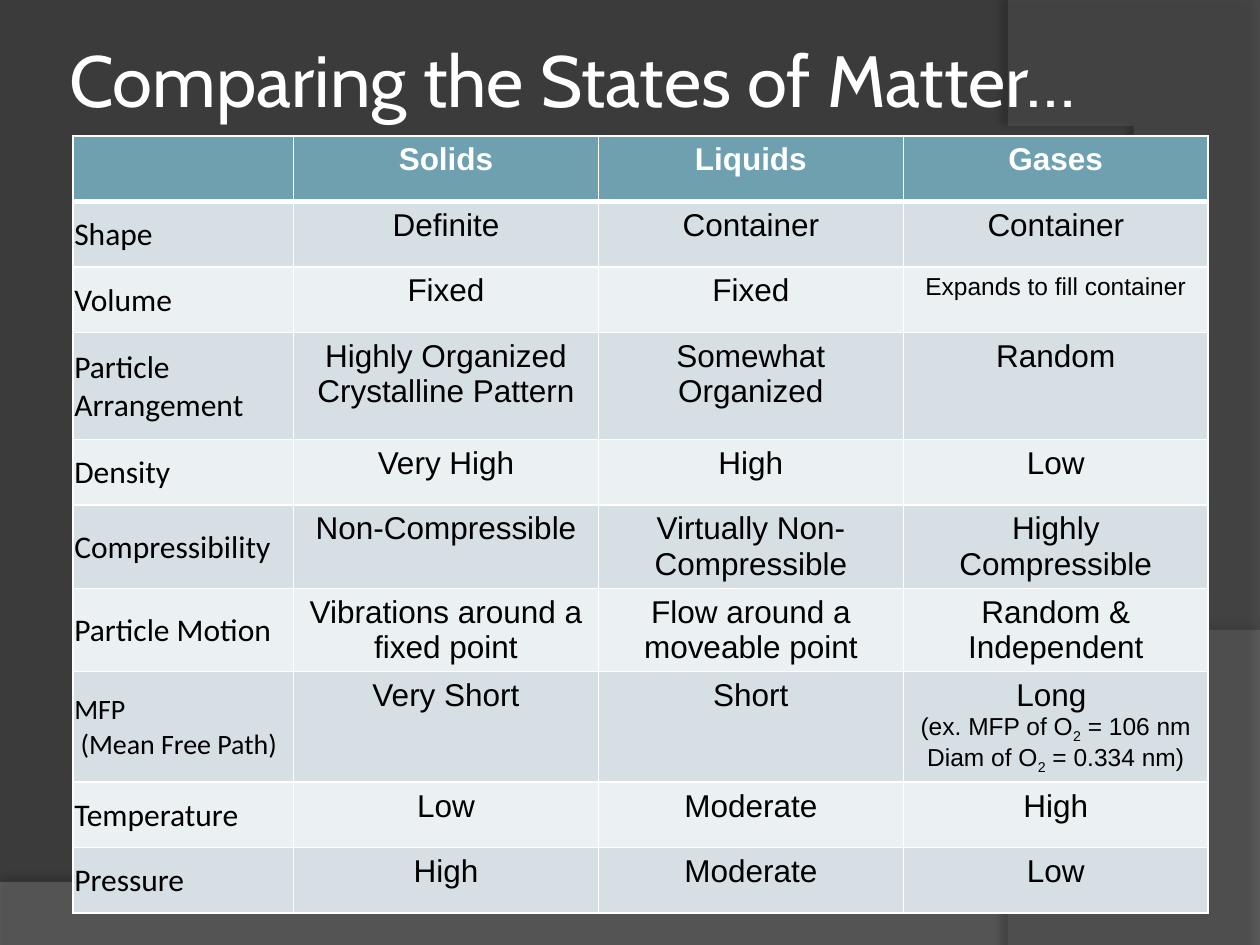
from lxml.etree import SubElement
from pptx import Presentation
from pptx.dml.color import RGBColor
from pptx.enum.text import MSO_ANCHOR, PP_ALIGN
from pptx.oxml import parse_xml
from pptx.oxml.ns import nsdecls, qn
from pptx.util import Inches, Pt

COLORS = {
    "background": "3B3B3B", "wave": "7F7F7F", "curve": "5E5E5E",
    "white": "FFFFFF", "black": "000000",
    "header": "6EA0B0", "odd": "D5DFE4", "even": "EBF0F2",
}
TITLE = "Comparing the States of Matter…"
ROWS = [
    ["", "Solids", "Liquids", "Gases"],
    ["Shape", "Definite", "Container", "Container"],
    ["Volume", "Fixed", "Fixed", "Expands to fill container"],
    ["Particle Arrangement", "Highly Organized Crystalline Pattern",
     "Somewhat Organized", "Random"],
    ["Density", "Very High", "High", "Low"],
    ["Compressibility", "Non-Compressible", "Virtually Non-Compressible",
     "Highly Compressible"],
    ["Particle Motion", "Vibrations around a fixed point",
     "Flow around a moveable point", "Random & Independent"],
    ["MFP\n (Mean Free Path)", "Very Short", "Short",
     "Long \n(ex. MFP of O₂ = 106 nm\nDiam of O₂ = 0.334 nm)"],
    ["Temperature", "Low", "Moderate", "High"],
    ["Pressure", "High", "Moderate", "Low"],
]
# Paragraphs that differ from the usual 18 points
SMALL_SIZES = {
    "Expands to fill container": 14, "MFP": 16, " (Mean Free Path)": 16,
    "(ex. MFP of O₂ = 106 nm": 14, "Diam of O₂ = 0.334 nm)": 14,
}
COLUMN_WIDTHS = [1.75, 2.42, 2.42, 2.42]
ROW_HEIGHT = 0.52
TALL_ROWS = {3: 0.85, 7: 0.7}

# Straight corners, then the cubic curve that closes each outline
BACKDROPS = [
    {"corners": [(0, 7.05), (0, 7.51), (10, 7.51), (10, 5.2)],
     "curve": [(5.59, 7.29), (3.91, 7.19), (0, 7.05)],
     "color": "wave", "opacity": 45, "shadow": (35, 4, 3.5, 270)},
    {"corners": [(10, 0.02), (10, 7.5), (8.21, 7.5)],
     "curve": [(9.35, 6.19), (10.18, 3), (8, 0)],
     "color": "curve", "opacity": 40, "shadow": (45, 4, 4, 180)},
]


def rgb(name):
    return RGBColor.from_string(COLORS[name])


def style(font, face, size, color, bold=False):
    font.name, font.size, font.bold = face, Pt(size), bold
    font.color.rgb = rgb(color)


def curve_points(start, first, second, end, steps=40):
    """Points along a cubic Bezier curve, without its start."""
    for step in range(1, steps + 1):
        t = step / steps
        weights = ((1 - t) ** 3, 3 * t * (1 - t) ** 2, 3 * t * t * (1 - t), t ** 3)
        yield tuple(sum(w * p[axis] for w, p in zip(weights, (start, first, second, end)))
                    for axis in (0, 1))


def add_backdrop(page, position, corners, curve, color, opacity, shadow):
    points = corners + list(curve_points(corners[-1], *curve))
    builder = page.shapes.build_freeform(*points[0], scale=Inches(1))
    builder.add_line_segments(points[1:], close=True)
    shape = builder.convert_to_shape()
    shape.fill.solid()
    shape.fill.fore_color.rgb = rgb(color)
    shape.line.fill.background()
    fill_color = shape._element.spPr.find(qn("a:solidFill"))[0]
    SubElement(fill_color, qn("a:alpha"), val=str(opacity * 1000))
    alpha, blur, distance, angle = shadow
    shape._element.spPr.append(parse_xml(
        f'<a:effectLst {nsdecls("a")}><a:outerShdw blurRad="{Pt(blur)}" '
        f'dist="{Pt(distance)}" dir="{angle * 60000}" algn="ctr" rotWithShape="0">'
        f'<a:srgbClr val="{COLORS["black"]}"><a:alpha val="{alpha * 1000}"/></a:srgbClr>'
        '</a:outerShdw></a:effectLst>'))
    page.shapes._spTree.insert(position, shape._element)  # behind the title


def add_borders(cell, bottom, top):
    widths = {"L": 1, "R": 1, "T": top, "B": bottom}
    for index, (side, width) in enumerate(widths.items()):
        cell._tc.get_or_add_tcPr().insert(index, parse_xml(
            f'<a:ln{side} {nsdecls("a")} w="{Pt(width)}"><a:solidFill>'
            f'<a:srgbClr val="{COLORS["white"]}"/></a:solidFill></a:ln{side}>'))


def write_paragraph(paragraph, text, face, color, bold):
    """Write the text, with each ₂ as a lowered 2."""
    size = SMALL_SIZES.get(text, 18)
    for index, part in enumerate(text.split("₂")):
        pieces = [(part, False)] if index == 0 else [("2", True), (part, False)]
        for piece, lowered in pieces:
            span = paragraph.add_run()
            span.text = piece
            style(span.font, face, size, color, bold)
            if lowered:
                span._r.get_or_add_rPr().set("baseline", "-25000")


def fill_cell(cell, text, row, column):
    is_header, is_label = row == 0, column == 0
    if is_label and not is_header:
        cell.vertical_anchor = MSO_ANCHOR.MIDDLE
        cell.margin_left = cell.margin_right = cell.margin_top = Inches(0.01)
        cell.margin_bottom = 0
    for index, line in enumerate(text.split("\n")):
        frame = cell.text_frame
        paragraph = frame.paragraphs[0] if index == 0 else frame.add_paragraph()
        paragraph.alignment = PP_ALIGN.LEFT if is_label else PP_ALIGN.CENTER
        if line:
            write_paragraph(paragraph, line, "Calibri" if is_label else "Arial",
                            "white" if is_header else "black", is_header)
    cell.fill.solid()
    cell.fill.fore_color.rgb = rgb("header" if is_header else "odd" if row % 2 else "even")
    add_borders(cell, bottom=3 if is_header else 1, top=3 if row == 1 else 1)


def add_comparison(page):
    heights = [TALL_ROWS.get(row, ROW_HEIGHT) for row in range(len(ROWS))]
    table = page.shapes.add_table(
        len(ROWS), len(COLUMN_WIDTHS), Inches(0.58), Inches(1.08),
        Inches(sum(COLUMN_WIDTHS)), Inches(sum(heights))).table
    for column, width in zip(table.columns, COLUMN_WIDTHS):
        column.width = Inches(width)
    for row, (height, texts) in enumerate(zip(heights, ROWS)):
        table.rows[row].height = Inches(height)
        for column, text in enumerate(texts):
            fill_cell(table.cell(row, column), text, row, column)


def add_title(page):
    title = page.shapes.title
    title.left, title.top = Inches(0.5), Inches(0)
    title.width, title.height = Inches(8.17), Inches(1.25)
    frame = title.text_frame
    frame.text = TITLE
    frame.word_wrap = True
    frame.vertical_anchor = MSO_ANCHOR.MIDDLE
    frame.margin_left = frame.margin_right = Inches(0.05)
    frame.margin_top = frame.margin_bottom = Inches(0.05)
    frame.paragraphs[0].alignment = PP_ALIGN.LEFT
    style(frame.paragraphs[0].runs[0].font, "Cabin", 41.4, "white")


def main():
    deck = Presentation()
    deck.slide_width, deck.slide_height = Inches(10), Inches(7.5)
    page = deck.slides.add_slide(deck.slide_layouts[5])
    page.background.fill.solid()
    page.background.fill.fore_color.rgb = rgb("background")
    for position, backdrop in enumerate(BACKDROPS, start=2):
        add_backdrop(page, position, **backdrop)
    add_title(page)
    add_comparison(page)
    deck.save("out.pptx")


if __name__ == "__main__":
    main()
